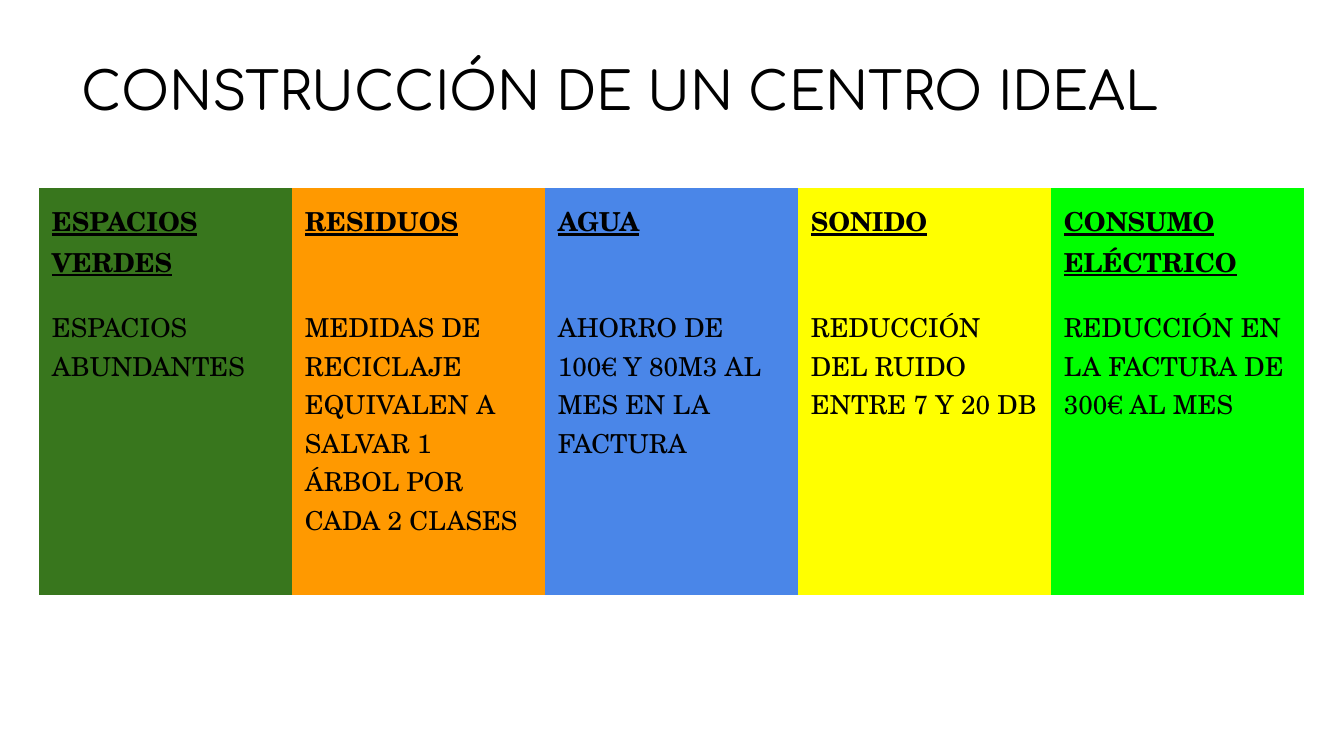
from dataclasses import dataclass

from pptx import Presentation
from pptx.dml.color import RGBColor
from pptx.enum.text import MSO_ANCHOR, PP_ALIGN
from pptx.util import Pt

EMU_PER_PX = 9144000 / 1344


@dataclass(frozen=True)
class Theme:
    title_font: str = "Comfortaa"
    body_font: str = "TeX Gyre Schola"
    title_size: int = 28
    body_size: int = 14
    ink: str = "000000"
    paper: str = "FFFFFF"


THEME = Theme()

# heading, measure, column colour
TOPICS = [
    ("ESPACIOS VERDES", "ESPACIOS ABUNDANTES", "38761D"),
    ("RESIDUOS",
     "MEDIDAS DE RECICLAJE EQUIVALEN A SALVAR 1 ÁRBOL POR CADA 2 CLASES",
     "FF9900"),
    ("AGUA", "AHORRO DE 100€ Y 80M3 AL MES EN LA FACTURA", "4A86E8"),
    ("SONIDO", "REDUCCIÓN DEL RUIDO ENTRE 7 Y 20 DB", "FFFF00"),
    ("CONSUMO ELÉCTRICO", "REDUCCIÓN EN LA FACTURA DE 300€ AL MES", "00FF00"),
]
COLUMN_WIDTH = 253
ROW_HEIGHTS = (105, 300)
PADDING = 13


def px(value):
    return round(value * EMU_PER_PX)


def fill_solid(fill, color):
    fill.solid()
    fill.fore_color.rgb = RGBColor.from_string(color)


def set_font(para, name, size, bold=False, underline=False):
    font = para.font
    font.name = name
    font.size = Pt(size)
    font.bold = bold
    font.underline = underline
    font.color.rgb = RGBColor.from_string(THEME.ink)


def set_padding(area, left=PADDING):
    """Set the inner margins of a text frame or a table cell."""
    area.margin_left = px(left)
    area.margin_right = area.margin_top = area.margin_bottom = px(PADDING)


def add_title(page, text):
    title = page.shapes.title
    title.left, title.top = px(8), px(36)
    title.width, title.height = px(1382), px(133)
    frame = title.text_frame
    frame.word_wrap = True
    frame.vertical_anchor = MSO_ANCHOR.TOP
    set_padding(frame, left=73)
    para = frame.paragraphs[0]
    para.text = text
    para.alignment = PP_ALIGN.LEFT
    para.line_spacing = 1.15
    set_font(para, THEME.title_font, THEME.title_size)


def fill_cell(cell, text, color, heading):
    fill_solid(cell.fill, color)
    set_padding(cell)
    cell.vertical_anchor = MSO_ANCHOR.TOP
    para = cell.text_frame.paragraphs[0]
    para.text = text
    set_font(para, THEME.body_font, THEME.body_size,
             bold=heading, underline=heading)


def add_topic_table(page):
    frame = page.shapes.add_table(
        len(ROW_HEIGHTS), len(TOPICS), px(39), px(188),
        px(COLUMN_WIDTH * len(TOPICS)), px(sum(ROW_HEIGHTS)))
    table = frame.table
    table.first_row = table.horz_banding = False
    for row, height in zip(table.rows, ROW_HEIGHTS):
        row.height = px(height)
    for index, (heading, measure, color) in enumerate(TOPICS):
        table.columns[index].width = px(COLUMN_WIDTH)
        fill_cell(table.cell(0, index), heading, color, heading=True)
        fill_cell(table.cell(1, index), measure, color, heading=False)
    # Plain style without grid lines
    style = frame._element.graphic.graphicData.tbl.tblPr.find(
        "{http://schemas.openxmlformats.org/drawingml/2006/main}tableStyleId")
    style.text = "{2D5ABB26-0587-4C30-8999-92F81FD0307C}"


def main():
    deck = Presentation()
    deck.slide_width, deck.slide_height = px(1344), px(756)
    page = deck.slides.add_slide(deck.slide_layouts[5])
    fill_solid(page.background.fill, THEME.paper)
    add_title(page, "CONSTRUCCIÓN DE UN CENTRO IDEAL")
    add_topic_table(page)
    deck.save("out.pptx")


if __name__ == "__main__":
    main()
